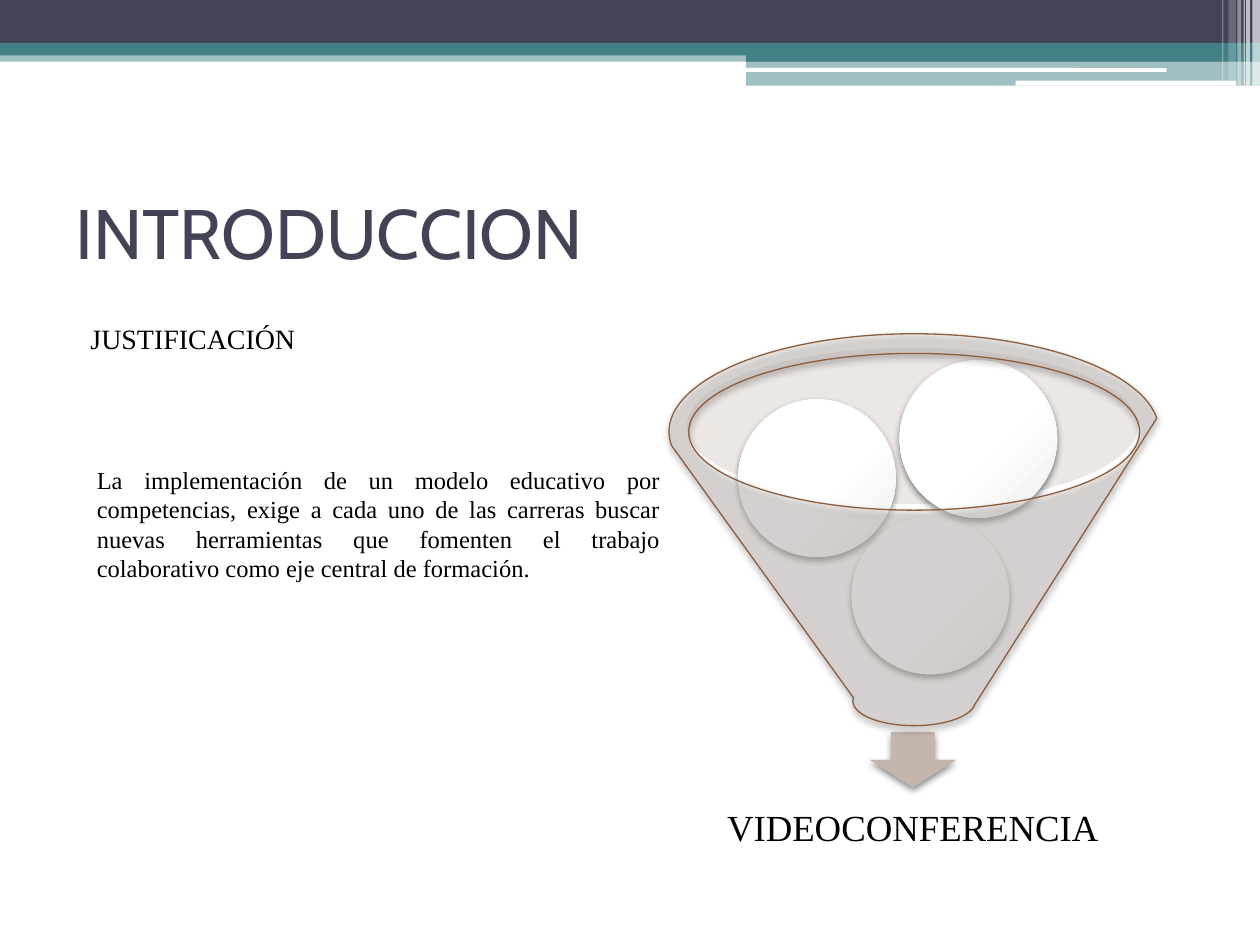
import pptx
import pptx.util
import pptx.dml.color
import pptx.enum.shapes
import pptx.enum.text
import pptx.oxml
import pptx.oxml.ns

KIND = pptx.enum.shapes.MSO_SHAPE
ALIGN = pptx.enum.text.PP_ALIGN
ANCHOR = pptx.enum.text.MSO_ANCHOR
WIDTH, HEIGHT = 10, 7.5

THEME = {
    "navy": "424456", "teal": "438086", "white": "FFFFFF", "black": "000000",
    "mouth": "D0C4C0", "arrow": "C4B6AF", "funnel": "DAD2CE", "rim": "8B5D3D",
    "ball edge": "EEEEEE",
    "heading font": "Cabin", "body font": "Times New Roman",
    "title": 40, "label": 21, "subtitle": 16, "body": 14,
}

# Every place is left, top, width, height in percent of the slide.
# Header bands: shape, place, colour, opacity
BANDS = [
    (KIND.RECTANGLE, (0, 5.33, 100, 1.2), "teal", 50),
    (KIND.RECTANGLE, (0, 0, 100, 4.53), "navy", 100),
    (KIND.RECTANGLE, (0, 4.53, 100, 1.33), "teal", 100),
    (KIND.RECTANGLE, (59.2, 5.2, 40.8, 1.33), "teal", 100),
    (KIND.RECTANGLE, (59.2, 6.4, 40.8, 2.67), "teal", 50),
    (KIND.ROUNDED_RECTANGLE, (59.1, 7.2, 33.5, 0.4), "white", 100),
    (KIND.ROUNDED_RECTANGLE, (80.6, 8.53, 17.5, 0.53), "white", 100),
]
# Header stripes: left, width, height, opacity
STRIPES = [
    (99.4, 0.6, 9.07, 65), (98.9, 0.3, 9.07, 65), (98.7, 0.1, 9.07, 60),
    (98.2, 0.3, 9.07, 40), (97.5, 0.6, 8.53, 20), (97, 0.1, 8.53, 30),
]
BALL_SIZE = (12.5, 16.67)
BALLS = [(67.6, 54.67), (58.6, 42.27), (71.4, 38.13)]

TITLE = dict(text="INTRODUCCION", place=(5, 16.67, 90, 15.6), size="title",
             face="heading font", color="navy", frame={"vertical_anchor": ANCHOR.MIDDLE})
SUBTITLE = dict(text="JUSTIFICACIÓN", place=(5, 33.33, 90, 62.53), size="subtitle",
                indent=(0.4, -0.28))
BODY = dict(text="La implementación de un modelo educativo por competencias, exige a cada "
                 "uno de las carreras buscar nuevas herramientas que fomenten el trabajo "
                 "colaborativo como eje central de formación.",
            place=(6.7, 48.53, 46.7, 18.13), size="body", layout={"alignment": ALIGN.JUSTIFY})
LABEL = dict(text="VIDEOCONFERENCIA", place=(55.8, 82.27, 33.3, 11.07), size="label",
             frame={"vertical_anchor": ANCHOR.MIDDLE},
             layout={"alignment": ALIGN.CENTER, "line_spacing": 0.9})


def xml(body):
    return pptx.oxml.parse_xml(body.replace(">", f" {pptx.oxml.ns.nsdecls('a')}>", 1))


def rgb(name):
    return pptx.dml.color.RGBColor.from_string(THEME[name])


def locate(place):
    """Turn percent of the slide into lengths."""
    sides = (WIDTH, HEIGHT, WIDTH, HEIGHT)
    return [pptx.util.Inches(share * side / 100) for share, side in zip(place, sides)]


def set_all(target, values):
    for name, value in values.items():
        setattr(target, name, value)


def add_figure(shapes, kind, place, color, opacity=100, line=None, shadow=False):
    figure = shapes.add_shape(kind, *locate(place))
    figure.shadow.inherit = False
    figure.fill.solid()
    figure.fill.fore_color.rgb = rgb(color)
    if opacity < 100:
        tint = figure._element.spPr.find(".//" + pptx.oxml.ns.qn("a:srgbClr"))
        tint.append(xml(f'<a:alpha val="{opacity * 1000}"></a:alpha>'))
    if line:
        figure.line.color.rgb = rgb(line)
        figure.line.width = pptx.util.Pt(0.75)
    else:
        figure.line.fill.background()
    if shadow:
        effects = figure._element.spPr.find(pptx.oxml.ns.qn("a:effectLst"))
        effects.append(xml(
            '<a:outerShdw blurRad="50800" dist="25400" dir="5400000" rotWithShape="0">'
            f'<a:srgbClr val="{THEME["black"]}"><a:alpha val="45000"/></a:srgbClr>'
            '</a:outerShdw>'))
    return figure


def add_ball(shapes, corner):
    ball = add_figure(shapes, KIND.OVAL, corner + BALL_SIZE, "white", shadow=True)
    stops = "".join(
        f'<a:gs pos="{share * 1000}"><a:srgbClr val="{THEME[color]}"/></a:gs>'
        for share, color in ((0, "white"), (55, "white"), (100, "ball edge")))
    gradient = xml(
        f'<a:gradFill rotWithShape="1"><a:gsLst>{stops}</a:gsLst><a:path path="circle">'
        '<a:fillToRect l="-40000" t="-90000" r="140000" b="190000"/></a:path></a:gradFill>')
    outline = ball._element.spPr
    outline.replace(outline.find(pptx.oxml.ns.qn("a:solidFill")), gradient)


def add_text(shapes, text, place, size, face="body font", color="black",
             frame=None, layout=None, indent=None):
    box = shapes.add_textbox(*locate(place))
    set_all(box.text_frame, {"word_wrap": True, **(frame or {})})
    para = box.text_frame.paragraphs[0]
    set_all(para, layout or {})
    if indent:
        margin, first = (str(pptx.util.Inches(length)) for length in indent)
        properties = para._p.get_or_add_pPr()
        properties.set("marL", margin)
        properties.set("indent", first)
    span = para.add_run()
    span.text = text
    set_all(span.font, {"size": pptx.util.Pt(THEME[size]), "name": THEME[face]})
    span.font.color.rgb = rgb(color)


def main():
    deck = pptx.Presentation()
    set_all(deck, {"slide_width": pptx.util.Inches(WIDTH),
                   "slide_height": pptx.util.Inches(HEIGHT)})
    page = deck.slides.add_slide(deck.slide_layouts[6])

    for band in BANDS:
        add_figure(page.shapes, *band)
    for left, width, height, opacity in STRIPES:
        add_figure(page.shapes, KIND.RECTANGLE, (left, 0, width, height), "white", opacity)
    add_text(page.shapes, **TITLE)
    add_text(page.shapes, **SUBTITLE)

    diagram = page.shapes.add_group_shape().shapes
    add_figure(diagram, KIND.OVAL, (54.5, 36.8, 35.8, 16.53), "mouth", 40)
    add_figure(diagram, KIND.DOWN_ARROW, (69, 77.47, 6.9, 5.87), "arrow", shadow=True)
    add_text(diagram, **LABEL)
    for corner in BALLS:
        add_ball(diagram, corner)
    add_figure(diagram, KIND.FUNNEL, (53.1, 35.33, 38.9, 41.47), "funnel", 40,
               line="rim", shadow=True)

    add_text(page.shapes, **BODY)
    deck.save("out.pptx")


if __name__ == "__main__":
    main()
